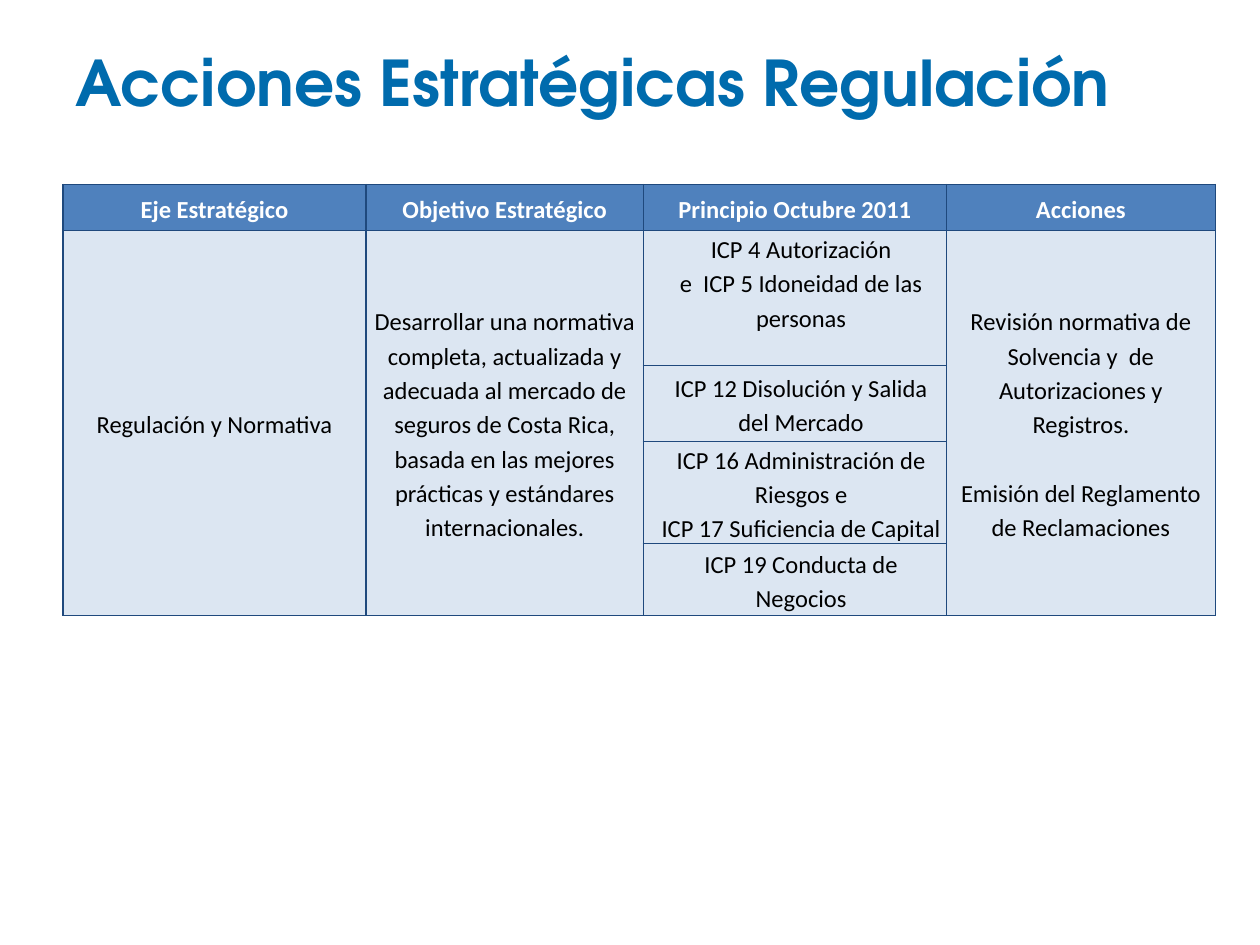
from lxml.etree import SubElement
from pptx import Presentation
from pptx.dml.color import RGBColor
from pptx.enum.text import MSO_ANCHOR, PP_ALIGN
from pptx.oxml.ns import qn
from pptx.util import Cm, Pt

NAVY, BLUE, PALE = "1F497D", "4F81BD", "DCE6F2"
HEADINGS = ["Eje Estratégico", "Objetivo Estratégico", "Principio Octubre 2011", "Acciones"]
AXIS = "Regulación y Normativa"
OBJECTIVE = (
    "Desarrollar una normativa completa, actualizada y adecuada al mercado de seguros "
    "de Costa Rica, basada en las mejores prácticas y estándares internacionales."
)
PRINCIPLES = [
    "ICP 4 Autorización\ne  ICP 5 Idoneidad de las personas",
    "ICP 12 Disolución y Salida del Mercado",
    "ICP 16 Administración de Riesgos e\nICP 17 Suficiencia de Capital",
    "ICP 19 Conducta de Negocios",
]
ACTIONS = (
    "Revisión normativa de Solvencia y  de Autorizaciones y Registros.\n"
    "Emisión del Reglamento de Reclamaciones"
)
COLUMN_WIDTHS = [6.11, 5.59, 6.11, 5.42]
ROW_HEIGHTS = [0.93, 2.72, 1.53, 2.06, 1.45]


def color(value):
    return RGBColor.from_string(value)


def write(frame, text, font="Calibri", size=14, ink="000000", bold=False,
          align=PP_ALIGN.CENTER, spacing=1.15, gap=0, indent=0):
    for index, line in enumerate(text.split("\n")):
        paragraph = frame.add_paragraph() if index else frame.paragraphs[0]
        paragraph.alignment = align
        paragraph.line_spacing = spacing
        if index and gap:
            paragraph.space_before = Pt(gap)
        if indent:
            properties = paragraph._p.get_or_add_pPr()
            properties.set("marL", str(Cm(indent)))
            properties.set("indent", "0")
        run = paragraph.add_run()
        run.text = line
        run.font.name = font
        run.font.size = Pt(size)
        run.font.bold = bold
        run.font.color.rgb = color(ink)


def format_cell(cell, background):
    properties = cell._tc.get_or_add_tcPr()
    for side in ("a:lnL", "a:lnR", "a:lnT", "a:lnB"):
        border = SubElement(properties, qn(side), w=str(Pt(1)))
        SubElement(SubElement(border, qn("a:solidFill")), qn("a:srgbClr"), val=NAVY)
    cell.fill.solid()
    cell.fill.fore_color.rgb = color(background)
    cell.vertical_anchor = MSO_ANCHOR.MIDDLE
    cell.margin_left = cell.margin_right = Cm(0.08)
    cell.margin_top = cell.margin_bottom = 0


def add_title(slide, left, top, width, height):
    title = slide.shapes.add_textbox(Cm(left), Cm(top), Cm(width), Cm(height)).text_frame
    title.word_wrap = True
    title.vertical_anchor = MSO_ANCHOR.MIDDLE
    write(title, "Acciones Estratégicas Regulación", font="TeX Gyre Adventor", size=36,
          ink="006BAD", bold=True, align=PP_ALIGN.LEFT, spacing=1.0)


def add_strategy(slide, left, top):
    strategy = slide.shapes.add_table(
        len(ROW_HEIGHTS), len(COLUMN_WIDTHS), Cm(left), Cm(top),
        Cm(sum(COLUMN_WIDTHS)), Cm(sum(ROW_HEIGHTS))).table
    strategy.horz_banding = False
    for column, width in zip(strategy.columns, COLUMN_WIDTHS):
        column.width = Cm(width)
    for index, (row, height) in enumerate(zip(strategy.rows, ROW_HEIGHTS)):
        row.height = Cm(height)
        for cell in row.cells:
            format_cell(cell, PALE if index else BLUE)

    for column, heading in enumerate(HEADINGS):
        write(strategy.cell(0, column).text_frame, heading, ink="FFFFFF", bold=True)
    for column, text in ((0, AXIS), (1, OBJECTIVE), (3, ACTIONS)):
        strategy.cell(1, column).merge(strategy.cell(len(PRINCIPLES), column))
        write(strategy.cell(1, column).text_frame, text, gap=19.7)
    for row, principle in enumerate(PRINCIPLES, start=1):
        write(strategy.cell(row, 2).text_frame, principle, indent=0.25)
    strategy.cell(1, 2).vertical_anchor = MSO_ANCHOR.TOP


def main():
    presentation = Presentation()
    presentation.slide_width, presentation.slide_height = Cm(25.4), Cm(19.05)
    slide = presentation.slides.add_slide(presentation.slide_layouts[6])
    add_title(slide, 1.27, 0.05, 22.86, 3.18)
    add_strategy(slide, 1.27, 3.72)
    presentation.save("out.pptx")


if __name__ == "__main__":
    main()
